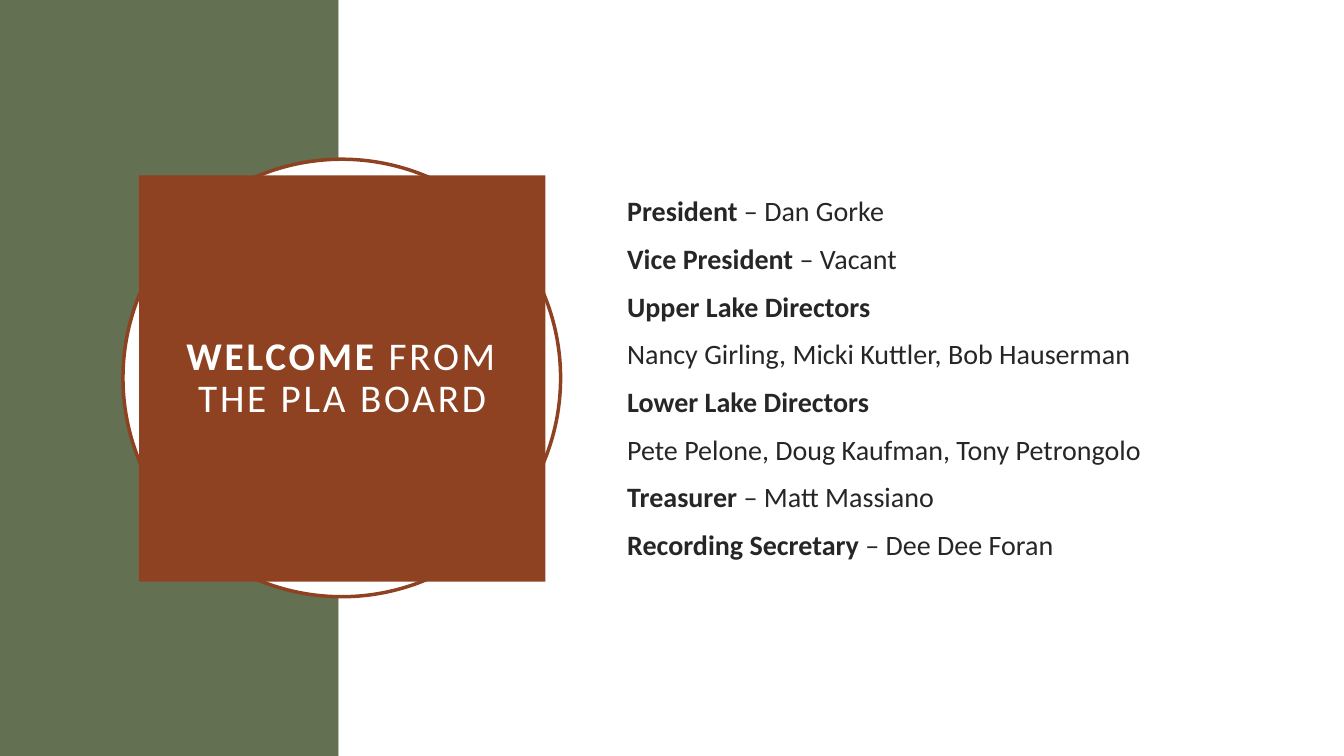
from pptx import Presentation
from pptx.dml.color import RGBColor
from pptx.enum.shapes import MSO_SHAPE
from pptx.enum.text import MSO_ANCHOR, MSO_AUTO_SIZE, PP_ALIGN
from pptx.util import Inches, Pt
from lxml.etree import SubElement

HUES = {"green": "637052", "rust": "8E4221", "white": "FFFFFF", "ink": "262626"}
WIDE, HIGH = 13.33, 7.5
SPLIT = 3.36
ROLES = [
    ("President", " – Dan Gorke"),
    ("Vice President ", "– Vacant"),
    ("Upper Lake Directors", ""),
    ("", "Nancy Girling, Micki Kuttler, Bob Hauserman"),
    ("Lower Lake Directors", ""),
    ("", "Pete Pelone, Doug Kaufman, Tony Petrongolo"),
    ("Treasurer", " – Matt Massiano"),
    ("Recording Secretary ", "– Dee Dee Foran"),
]


def place(shape, *box):
    """Set left, top, width and height in inches."""
    for side, size in zip(("left", "top", "width", "height"), box):
        setattr(shape, side, Inches(size))


def write(para, pair, size, hue):
    """Add a bold run and a plain run, leaving out an empty one."""
    for text, bold in zip(pair, (True, False)):
        if text:
            run = para.add_run()
            run.text = text
            looks = {"name": "Calibri", "size": Pt(size), "bold": bold}
            for key, value in looks.items():
                setattr(run.font, key, value)
            run.font.color.rgb = RGBColor.from_string(HUES[hue])


deck = Presentation()
deck.slide_width, deck.slide_height = Inches(WIDE), Inches(HIGH)
slide = deck.slides.add_slide(deck.slide_layouts[1])
title, body = slide.placeholders

# Backdrop: two panels and the ring
for kind, box, fill, edge in [
    (MSO_SHAPE.RECTANGLE, (0, 0, SPLIT, HIGH), "green", None),
    (MSO_SHAPE.RECTANGLE, (SPLIT, 0, WIDE - SPLIT, HIGH), "white", None),
    (MSO_SHAPE.OVAL, (1.22, 1.58, 4.34, 4.34), "white", "rust"),
]:
    shape = slide.shapes.add_shape(kind, *map(Inches, box))
    shape.shadow.inherit = False
    shape.fill.solid()
    shape.fill.fore_color.rgb = RGBColor.from_string(HUES[fill])
    if edge:
        shape.line.color.rgb = RGBColor.from_string(HUES[edge])
        shape.line.width = Pt(2.5)
    else:
        shape.line.fill.background()

# Placeholders go in front of the backdrop
for holder in (title, body):
    slide.shapes._spTree.append(holder._element)
    frame = holder.text_frame
    frame.word_wrap = True
    frame.auto_size = MSO_AUTO_SIZE.NONE
    frame.vertical_anchor = MSO_ANCHOR.MIDDLE

# Title
place(title, 1.38, 1.74, 4.03, 4.03)
title.fill.solid()
title.fill.fore_color.rgb = RGBColor.from_string(HUES["rust"])
for side in ("left", "top", "right", "bottom"):
    setattr(title.text_frame, f"margin_{side}", Inches(0.2))
head = title.text_frame.paragraphs[0]
head.alignment = PP_ALIGN.CENTER
head.line_spacing = 0.9
write(head, ("WELCOME", " FROM THE PLA BOARD"), 28, "white")
for run in head.runs:
    run.font._element.set("spc", "200")

# Board list
place(body, 6.12, 1.53, 6.97, 4.43)
frame = body.text_frame
for row, pair in enumerate(ROLES):
    para = frame.add_paragraph() if row else frame.paragraphs[0]
    para.space_before = Pt(10)
    props = para._p.get_or_add_pPr()
    props.set("marL", "0")
    props.set("indent", "0")
    SubElement(props, props.tag.replace("pPr", "buNone"))
    write(para, pair, 20, "ink")

deck.save("out.pptx")
